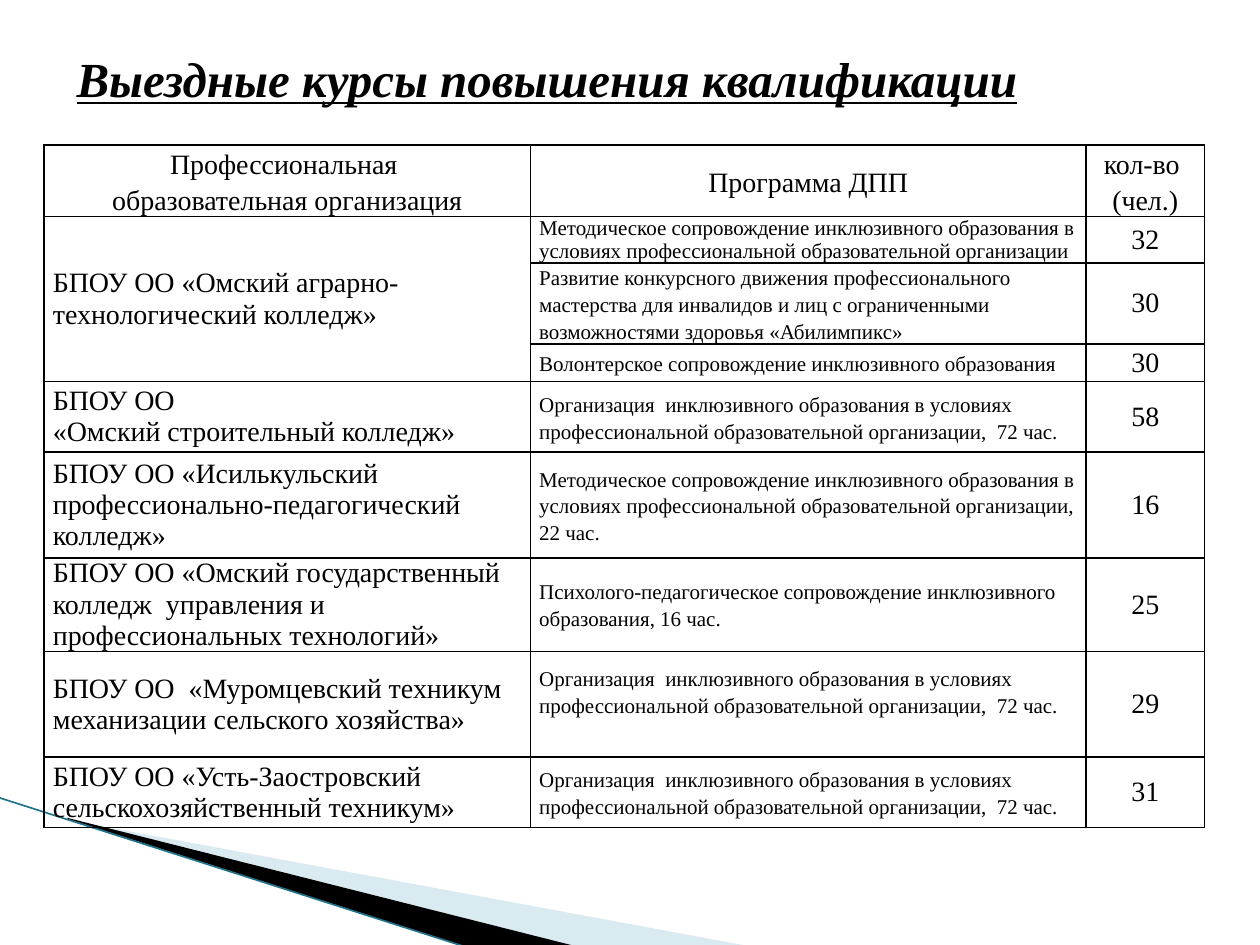
from lxml.etree import SubElement
from pptx import Presentation
from pptx.dml.color import RGBColor
from pptx.enum.shapes import MSO_CONNECTOR
from pptx.enum.text import MSO_ANCHOR, PP_ALIGN
from pptx.oxml import parse_xml
from pptx.oxml.ns import nsdecls, qn
from pptx.util import Inches, Pt

FONT = "Times New Roman"
TITLE = "Выездные курсы повышения квалификации"
HEADERS = ["Профессиональная \nобразовательная организация", "Программа ДПП", "кол-во \n(чел.)"]
METHOD = "Методическое сопровождение инклюзивного образования в условиях профессиональной образовательной организации"
ORGANIZING = "Организация  инклюзивного образования в условиях профессиональной образовательной организации,  72 час."
COURSES = [
    ("БПОУ ОО «Омский аграрно-технологический колледж»", [
        (METHOD, 32),
        ("Развитие конкурсного движения профессионального мастерства для инвалидов и лиц "
         "с ограниченными возможностями здоровья «Абилимпикс»", 30),
        ("Волонтерское сопровождение инклюзивного образования", 30)]),
    ("БПОУ ОО\n«Омский строительный колледж»", [(ORGANIZING, 58)]),
    ("БПОУ ОО «Исилькульский профессионально-педагогический колледж»", [(METHOD + ", 22 час.", 16)]),
    ("БПОУ ОО «Омский государственный колледж  управления и профессиональных технологий»", [
        ("Психолого-педагогическое сопровождение инклюзивного образования, 16 час.", 25)]),
    ("БПОУ ОО  «Муромцевский техникум механизации сельского хозяйства»", [(ORGANIZING, 29)]),
    ("БПОУ ОО «Усть-Заостровский сельскохозяйственный техникум»", [(ORGANIZING, 31)]),
]
COLUMN_WIDTHS = [3.86, 4.41, 0.94]
ROW_HEIGHTS = [0.56, 0.37, 0.64, 0.3, 0.56, 0.84, 0.74, 0.84, 0.56]
RAISED_ROW = 7
WEDGES = [
    ([(0.55, 6.51), (5.95, 7.51), (4.56, 7.51), (0.55, 6.5)], "A0CBDC", 40),
    ([(0.53, 6.49), (4.57, 7.51), (3.72, 7.52), (0.54, 6.5)], "000000", 100),
]


def color(value):
    return RGBColor.from_string(value)


def style_font(para, size):
    para.font.name = FONT
    para.font.size = Pt(size)
    para.font.color.rgb = color("000000")


def add_wedge(page, points, fill, opacity):
    corners = [(Inches(x), Inches(y)) for x, y in points]
    builder = page.shapes.build_freeform(*corners[0])
    builder.add_line_segments(corners[1:], close=True)
    wedge = builder.convert_to_shape()
    wedge.shadow.inherit = False
    wedge.fill.solid()
    wedge.fill.fore_color.rgb = color(fill)
    wedge.line.fill.background()
    if opacity < 100:
        tone = wedge.fill._xPr.find(qn("a:solidFill"))[0]
        SubElement(tone, qn("a:alpha")).set("val", str(opacity * 1000))


def add_edge(page):
    edge = page.shapes.add_connector(
        MSO_CONNECTOR.STRAIGHT, Inches(-0.01), Inches(6.33), Inches(3.71), Inches(7.52))
    edge.line.color.rgb = color("1F7287")
    edge.line.width = Pt(0.95)
    SubElement(edge._element.spPr, qn("a:effectLst"))


def add_borders(cell):
    properties = cell._tc.get_or_add_tcPr()
    for index, side in enumerate("LRTB"):
        properties.insert(index, parse_xml(
            f'<a:ln{side} {nsdecls("a")} w="{Pt(1)}"><a:solidFill>'
            f'<a:srgbClr val="000000"/></a:solidFill></a:ln{side}>'))


def write_cell(cell, text, size=16, align=PP_ALIGN.LEFT, spacing=1.0):
    cell.text = text
    for para in cell.text_frame.paragraphs:
        para.alignment = align
        para.line_spacing = spacing
        style_font(para, size)


def add_course_table(page):
    table = page.shapes.add_table(
        len(ROW_HEIGHTS), len(COLUMN_WIDTHS), Inches(0.35), Inches(1.15),
        Inches(sum(COLUMN_WIDTHS)), Inches(sum(ROW_HEIGHTS))).table
    table.first_row = table.horz_banding = False
    for column, width in zip(table.columns, COLUMN_WIDTHS):
        column.width = Inches(width)
    for row, height in zip(table.rows, ROW_HEIGHTS):
        row.height = Inches(height)
    for cell in table.iter_cells():
        cell.fill.background()
        cell.vertical_anchor = MSO_ANCHOR.MIDDLE
        cell.margin_left = cell.margin_right = Inches(0.07)
        cell.margin_top = cell.margin_bottom = 0
        add_borders(cell)
    for index, header in enumerate(HEADERS):
        write_cell(table.cell(0, index), header, align=PP_ALIGN.CENTER, spacing=1.15)
    top = 1
    for college, programs in COURSES:
        if len(programs) > 1:
            table.cell(top, 0).merge(table.cell(top + len(programs) - 1, 0))
        write_cell(table.cell(top, 0), college)
        for row, (program, people) in enumerate(programs, top):
            write_cell(table.cell(row, 1), program, size=12, spacing=1.0 if row == 1 else 1.15)
            write_cell(table.cell(row, 2), str(people), align=PP_ALIGN.CENTER)
        top += len(programs)
    table.cell(RAISED_ROW, 1).margin_bottom = Inches(0.2)


def add_title(page):
    box = page.shapes.add_textbox(Inches(0.51), Inches(0.21), Inches(9), Inches(0.82))
    frame = box.text_frame
    frame.word_wrap = True
    frame.vertical_anchor = MSO_ANCHOR.MIDDLE
    para = frame.paragraphs[0]
    para.text = TITLE
    style_font(para, 28)
    para.font.bold = para.font.italic = para.font.underline = True


def main():
    deck = Presentation()
    deck.slide_width, deck.slide_height = Inches(10), Inches(7.5)
    page = deck.slides.add_slide(deck.slide_layouts[6])
    for points, fill, opacity in WEDGES:
        add_wedge(page, points, fill, opacity)
    add_edge(page)
    add_course_table(page)
    add_title(page)
    deck.save("out.pptx")


if __name__ == "__main__":
    main()
